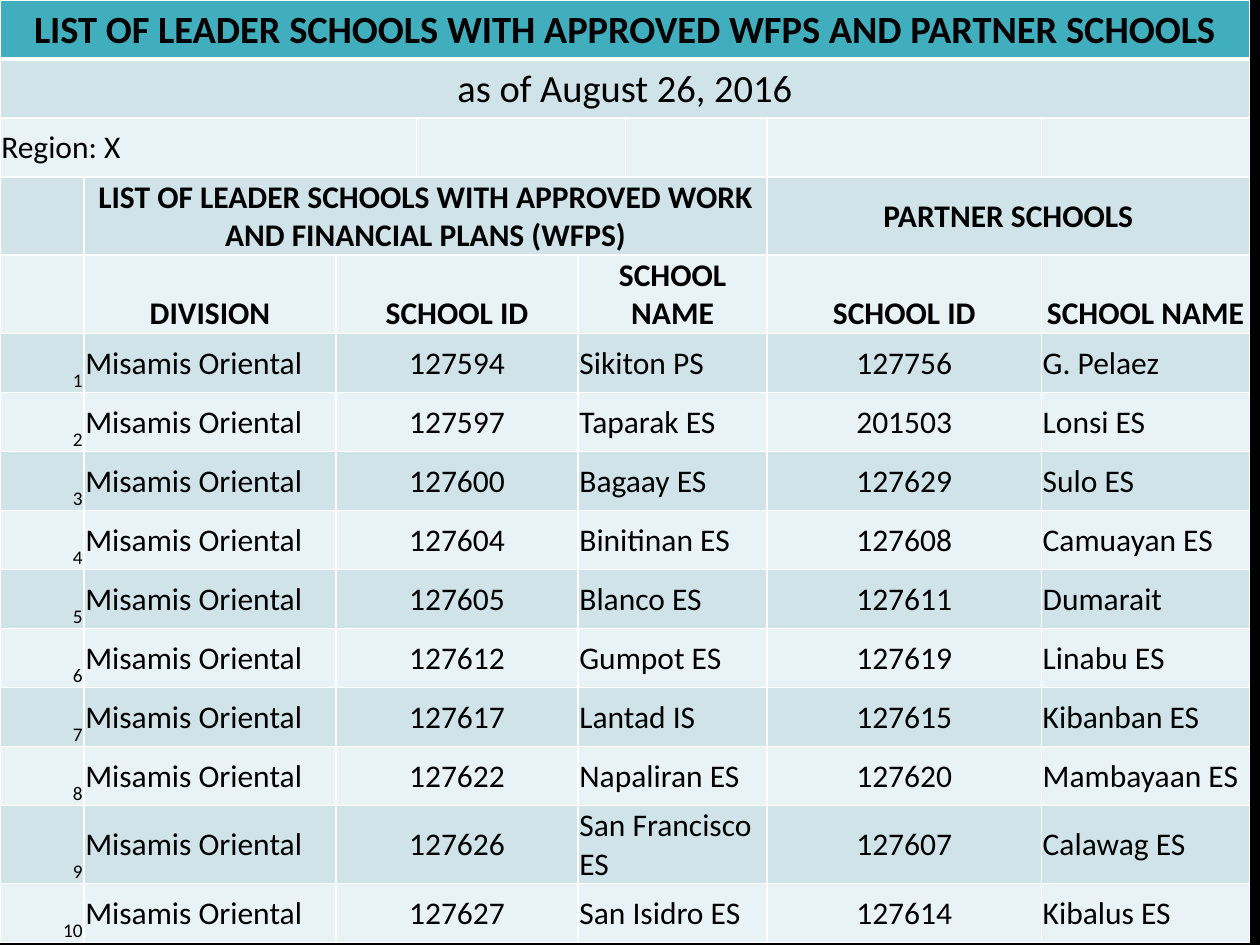
from lxml import etree
from pptx import Presentation
from pptx.dml.color import RGBColor
from pptx.enum.text import MSO_ANCHOR, PP_ALIGN
from pptx.oxml.ns import qn
from pptx.util import Pt

LEFT, CENTER, RIGHT = PP_ALIGN.LEFT, PP_ALIGN.CENTER, PP_ALIGN.RIGHT
MIDDLE, BOTTOM = MSO_ANCHOR.MIDDLE, MSO_ANCHOR.BOTTOM

COLORS = {
    "background": "000000",
    "text": "000000",
    "border": "FFFFFF",
    "banner": "41AEBD",
    "dark band": "CFE3E8",
    "light band": "E9F2F4",
}
FONT = "Calibri"
COLUMN_WIDTHS = [48, 144, 46, 92.4, 27.2, 80.8, 156.8, 119]
ROW_HEIGHT = 33.72
HEADER_ROWS = 5
DIVISION = "Misamis Oriental"

# leader school ID and name, partner school ID and name
SCHOOLS = [
    ("127594", "Sikiton PS", "127756", "G. Pelaez"),
    ("127597", "Taparak ES", "201503", "Lonsi ES"),
    ("127600", "Bagaay ES", "127629", "Sulo ES"),
    ("127604", "Binitinan ES", "127608", "Camuayan ES"),
    ("127605", "Blanco ES", "127611", "Dumarait"),
    ("127612", "Gumpot ES", "127619", "Linabu ES"),
    ("127617", "Lantad IS", "127615", "Kibanban ES"),
    ("127622", "Napaliran ES", "127620", "Mambayaan ES"),
    ("127626", "San Francisco ES", "127607", "Calawag ES"),
    ("127627", "San Isidro ES", "127614", "Kibalus ES"),
]


def rgb(name):
    return RGBColor.from_string(COLORS[name])


def set_borders(cell, bottom):
    tcPr = cell._tc.get_or_add_tcPr()
    for tag, width in (("lnL", 1), ("lnR", 1), ("lnT", 1), ("lnB", bottom)):
        ln = etree.SubElement(tcPr, qn(f"a:{tag}"), w=str(Pt(width)))
        fill = etree.SubElement(ln, qn("a:solidFill"))
        etree.SubElement(fill, qn("a:srgbClr"), val=COLORS["border"])


def style_cells(table):
    """Give every cell its borders, banded fill and tight margins."""
    for i, row in enumerate(table.rows):
        band = "banner" if i == 0 else "dark band" if i % 2 else "light band"
        for cell in row.cells:
            set_borders(cell, 3 if i == 0 else 1)
            cell.fill.solid()
            cell.fill.fore_color.rgb = rgb(band)
            cell.margin_left = cell.margin_right = cell.margin_top = Pt(0.75)
            cell.margin_bottom = Pt(0)


def write(table, row, col, text="", span=1, align=LEFT, anchor=MIDDLE, size=18, bold=False):
    cell = table.cell(row, col)
    if span > 1:
        cell.merge(table.cell(row, col + span - 1))
    cell.vertical_anchor = anchor
    p = cell.text_frame.paragraphs[0]
    p.text = text
    p.alignment = align
    p.font.name = FONT
    p.font.size = Pt(size)
    p.font.bold = bold
    p.font.color.rgb = rgb("text")


def write_headers(table):
    write(table, 0, 0, "LIST OF LEADER SCHOOLS WITH APPROVED WFPS AND PARTNER SCHOOLS",
          span=8, align=CENTER, size=22, bold=True)
    write(table, 1, 0, "as of August 26, 2016", span=8, align=CENTER, size=22)
    write(table, 2, 0, "Region: X", span=3)
    write(table, 2, 3, span=2)
    write(table, 3, 1, "LIST OF LEADER SCHOOLS WITH APPROVED WORK AND FINANCIAL PLANS (WFPS)",
          span=5, align=CENTER, bold=True)
    write(table, 3, 6, "PARTNER SCHOOLS", span=2, align=CENTER, bold=True)
    headings = [(1, "DIVISION", 1), (2, "SCHOOL ID", 2), (4, "SCHOOL NAME", 2),
                (6, "SCHOOL ID", 1), (7, "SCHOOL NAME", 1)]
    for col, text, span in headings:
        write(table, 4, col, text, span, CENTER, BOTTOM, bold=True)


def write_schools(table):
    for number, (leader_id, leader, partner_id, partner) in enumerate(SCHOOLS, 1):
        row = HEADER_ROWS + number - 1
        write(table, row, 0, str(number), align=RIGHT, anchor=BOTTOM, size=11)
        write(table, row, 1, DIVISION)
        write(table, row, 2, leader_id, span=2, align=CENTER)
        write(table, row, 4, leader, span=2)
        write(table, row, 6, partner_id, align=CENTER)
        write(table, row, 7, partner)


def add_school_table(s):
    rows = HEADER_ROWS + len(SCHOOLS)
    table = s.shapes.add_table(rows, len(COLUMN_WIDTHS), Pt(0), Pt(0),
                               Pt(sum(COLUMN_WIDTHS)), Pt(rows * ROW_HEIGHT)).table
    for column, width in zip(table.columns, COLUMN_WIDTHS):
        column.width = Pt(width)
    for row in table.rows:
        row.height = Pt(ROW_HEIGHT)
    style_cells(table)
    write_headers(table)
    write_schools(table)


def main():
    prs = Presentation()
    prs.slide_width, prs.slide_height = Pt(720), Pt(540)
    s = prs.slides.add_slide(prs.slide_layouts[6])
    s.background.fill.solid()
    s.background.fill.fore_color.rgb = rgb("background")
    add_school_table(s)
    prs.save("out.pptx")


if __name__ == "__main__":
    main()
